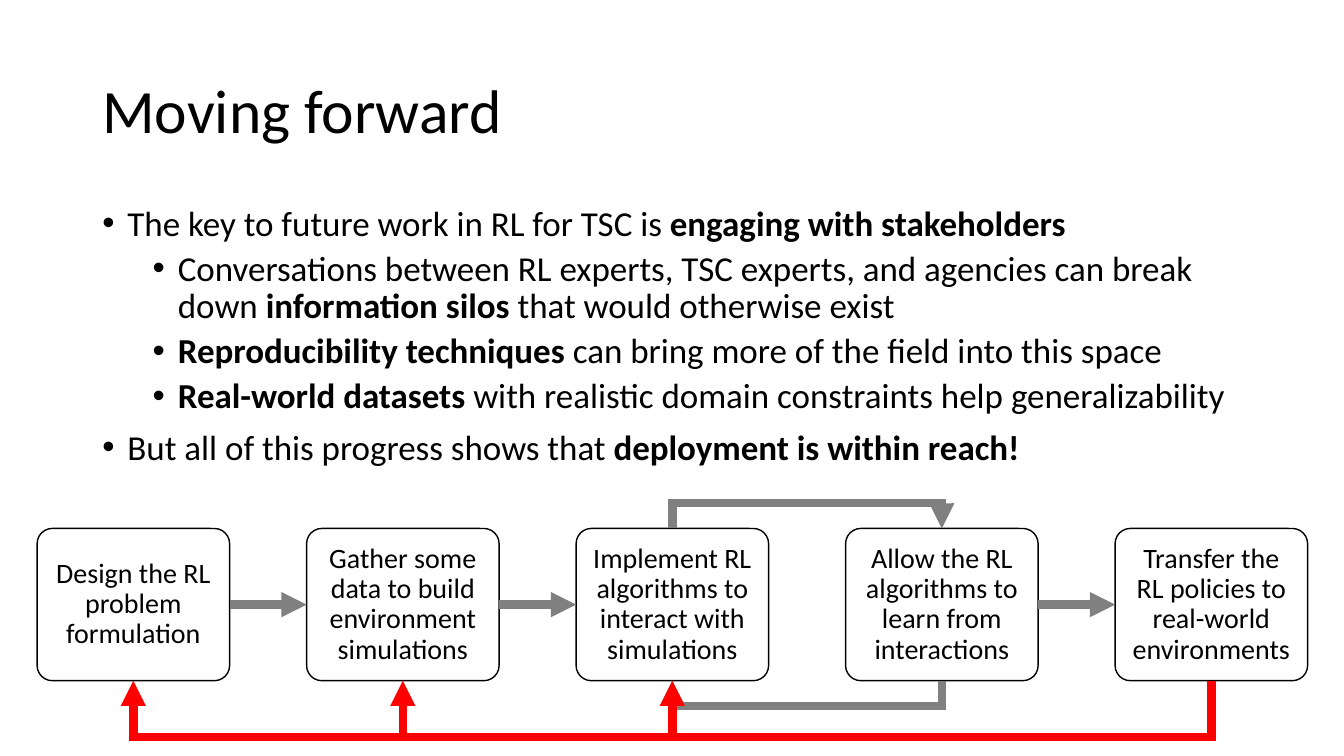
from lxml.etree import SubElement
from pptx import Presentation
from pptx.dml.color import RGBColor
from pptx.enum.shapes import MSO_CONNECTOR, MSO_SHAPE
from pptx.enum.text import MSO_ANCHOR, PP_ALIGN
from pptx.oxml.ns import qn
from pptx.util import Pt

BLACK = RGBColor(0, 0, 0)
WHITE = RGBColor(255, 255, 255)
GRAY = RGBColor(128, 128, 128)
RED = RGBColor(255, 0, 0)
FONT = "Calibri"

# Each point: level, then runs of (text, bold)
POINTS = [
    (0, [("The key to future work in RL for TSC is ", False),
         ("engaging with stakeholders", True)]),
    (1, [("Conversations between RL experts, TSC experts, and agencies can break down ", False),
         ("information silos ", True),
         ("that would otherwise exist", False)]),
    (1, [("Reproducibility techniques ", True),
         ("can bring more of the field into this space", False)]),
    (1, [("Real-world datasets", True),
         (" with realistic domain constraints help generalizability", False)]),
    (0, [("But all of this progress shows that ", False),
         ("deployment is within reach!", True)]),
]
STEPS = [
    "Design the RL problem formulation",
    "Gather some data to build environment simulations",
    "Implement RL algorithms to interact with simulations",
    "Allow the RL algorithms to learn from interactions",
    "Transfer the RL policies to real-world environments",
]


def add_run(para, text, size, bold=False):
    run = para.add_run()
    run.text = text
    font = run.font
    font.name, font.size, font.bold = FONT, Pt(size), bold
    font.color.rgb = BLACK


def add_box(slide, left, top, width, height, anchor):
    box = slide.shapes.add_textbox(Pt(left), Pt(top), Pt(width), Pt(height))
    frame = box.text_frame
    frame.word_wrap = True
    frame.vertical_anchor = anchor
    return frame


def add_title(slide, left, top, width, height):
    frame = add_box(slide, left, top, width, height, MSO_ANCHOR.MIDDLE)
    para = frame.paragraphs[0]
    para.line_spacing = 0.9
    add_run(para, "Moving forward", 44)


def set_bullet(para, level):
    props = para._p.get_or_add_pPr()
    props.set("marL", str(Pt(18 + 36 * level)))
    props.set("indent", str(Pt(-18)))
    SubElement(props, qn("a:buFont")).set("typeface", "Arial")
    SubElement(props, qn("a:buChar")).set("char", "•")


def add_points(slide, left, top, width, height):
    frame = add_box(slide, left, top, width, height, MSO_ANCHOR.TOP)
    for i, (level, runs) in enumerate(POINTS):
        para = frame.add_paragraph() if i else frame.paragraphs[0]
        para.level = level
        para.line_spacing = 0.9
        para.space_before = Pt(5 if level else 10)
        set_bullet(para, level)
        for text, bold in runs:
            add_run(para, text, 25, bold)


def style_arrow(line, color):
    """Thick line with square corners and a triangle at its end."""
    line.color.rgb = color
    line.width = Pt(6)
    props = line._get_or_add_ln()
    SubElement(props, qn("a:miter")).set("lim", "800000")
    SubElement(props, qn("a:tailEnd")).set("type", "triangle")


def add_step(slide, text, left, top, width, height):
    step = slide.shapes.add_shape(
        MSO_SHAPE.ROUNDED_RECTANGLE, Pt(left), Pt(top), Pt(width), Pt(height))
    step.adjustments[0] = 0.1
    step.shadow.inherit = False
    step.fill.solid()
    step.fill.fore_color.rgb = WHITE
    step.line.color.rgb = BLACK
    step.line.width = Pt(1)
    frame = step.text_frame
    frame.word_wrap = True
    frame.vertical_anchor = MSO_ANCHOR.MIDDLE
    frame.margin_left = frame.margin_right = Pt(6)
    frame.margin_top = frame.margin_bottom = Pt(6)
    para = frame.paragraphs[0]
    para.alignment = PP_ALIGN.CENTER
    para.line_spacing = 0.9
    add_run(para, text, 20)
    return step


def join_steps(slide, first, second):
    arrow = slide.shapes.add_connector(MSO_CONNECTOR.STRAIGHT, 0, 0, 0, 0)
    arrow.begin_connect(first, 3)
    arrow.end_connect(second, 1)
    style_arrow(arrow.line, GRAY)
    SubElement(arrow._element.spPr, qn("a:effectLst"))


def add_loop(slide, start, end, edge, bend, color):
    """Arrow from (start, edge) by way of the height bend to (end, edge)."""
    path = slide.shapes.build_freeform(Pt(start), Pt(edge))
    corners = [(start, bend), (end, bend), (end, edge)]
    path.add_line_segments([(Pt(x), Pt(y)) for x, y in corners], close=False)
    loop = path.convert_to_shape()
    loop.shadow.inherit = False
    loop.fill.background()
    style_arrow(loop.line, color)


def add_flow(slide, left, top, width, height):
    wide = 137.5
    pitch = (width - wide) / (len(STEPS) - 1)
    low = top + height
    steps = [add_step(slide, text, left + i * pitch, top, wide, height)
             for i, text in enumerate(STEPS)]
    mids = [left + i * pitch + wide / 2 for i in range(len(STEPS))]
    for i in (0, 1, 3):
        join_steps(slide, steps[i], steps[i + 1])
    add_loop(slide, mids[2], mids[3], top, top - 18, GRAY)
    add_loop(slide, mids[3], mids[2], low, low + 18, GRAY)
    for mid in mids[:3]:
        add_loop(slide, mids[4], mid, low, low + 40, RED)


def main():
    deck = Presentation()
    deck.slide_width, deck.slide_height = Pt(960), Pt(540)
    slide = deck.slides.add_slide(deck.slide_layouts[6])
    add_title(slide, 66, 28.75, 828, 104.4)
    add_points(slide, 66, 143.75, 828, 200)
    add_flow(slide, 26.5, 377.5, 907.5, 108.75)
    deck.save("out.pptx")


if __name__ == "__main__":
    main()
